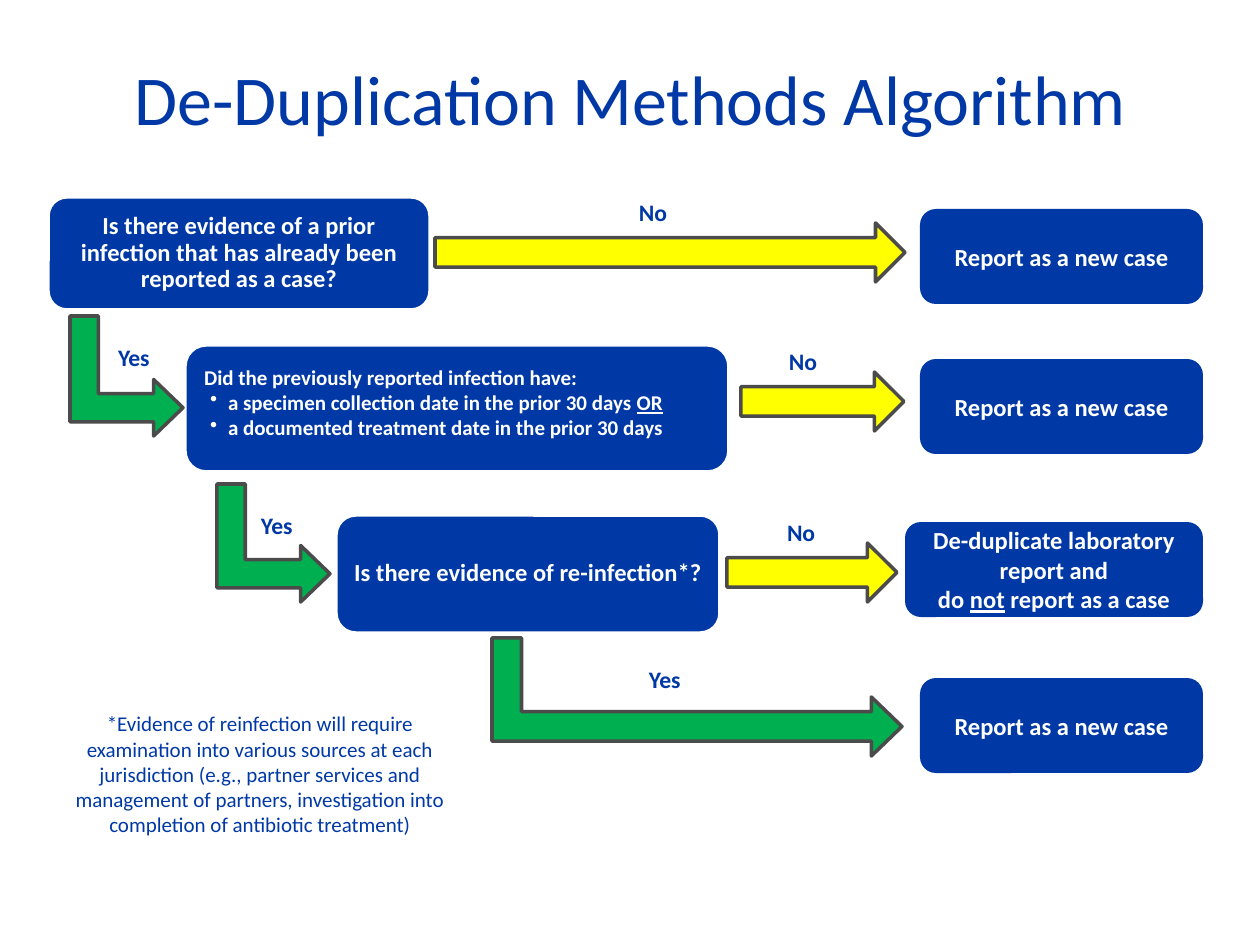
from lxml.etree import SubElement
from pptx import Presentation
from pptx.dml.color import RGBColor
from pptx.enum.shapes import MSO_SHAPE as Shape
from pptx.enum.text import MSO_ANCHOR as Anchor, PP_ALIGN as Align
from pptx.oxml.ns import qn
from pptx.util import Emu, Pt

PX_PER_INCH = 126
FONT = "Calibri"
BLUE, GREEN, YELLOW, WHITE, GRAY = "0039A6", "00B050", "FFFF00", "FFFFFF", "4B4B4B"
NEW_CASE = [["Report as a new case"]]


def px(length):
    return Emu(round(length * 914400 / PX_PER_INCH))


def paint(color_format, color):
    color_format.rgb = RGBColor.from_string(color)


def add_bullet(paragraph, indent, hang):
    properties = paragraph._p.get_or_add_pPr()
    properties.set("marL", str(px(indent)))
    properties.set("indent", str(-px(hang)))
    SubElement(properties, qn("a:buChar")).set("char", "•")


def write(shape, paragraphs, size, color, bold=False, align=Align.LEFT,
          anchor=Anchor.TOP, inset=(13, 6), spacing=None, bullets=False):
    """Each paragraph is a list of runs; a run starting with _ is underlined."""
    frame = shape.text_frame
    frame.word_wrap = True
    frame.vertical_anchor = anchor
    frame.margin_left = frame.margin_right = px(inset[0])
    frame.margin_top = frame.margin_bottom = px(inset[1])
    for index, runs in enumerate(paragraphs):
        paragraph = frame.add_paragraph() if index else frame.paragraphs[0]
        paragraph.alignment = align
        if spacing:
            paragraph.line_spacing = spacing
        if bullets and index:
            add_bullet(paragraph, 24, 18)
        for text in runs:
            run = paragraph.add_run()
            run.text = text.lstrip("_")
            font = run.font
            font.name, font.size, font.bold = FONT, Pt(size), bold
            if text.startswith("_"):
                font.underline = True
            paint(font.color, color)


def add_text(slide, box, text, size, **style):
    text_box = slide.shapes.add_textbox(*map(px, box))
    write(text_box, [[text]], size, BLUE, **style)


def add_block(slide, kind, box, fill, line=None):
    shape = slide.shapes.add_shape(kind, *map(px, box))
    shape.shadow.inherit = False
    shape.fill.solid()
    paint(shape.fill.fore_color, fill)
    if line:
        paint(shape.line.color, line)
        shape.line.width = Pt(2)
    else:
        shape.line.fill.background()
    return shape


def add_question(slide, box, text):
    shape = add_block(slide, Shape.ROUNDED_RECTANGLE, box, BLUE, WHITE)
    write(shape, [[text]], 14, WHITE, bold=True, align=Align.CENTER,
          anchor=Anchor.MIDDLE, inset=(9, 9), spacing=0.9)


def add_criteria(slide, box, paragraphs):
    shape = add_block(slide, Shape.ROUNDED_RECTANGLE, box, BLUE, WHITE)
    write(shape, paragraphs, 12, WHITE, bold=True, inset=(13, 13), bullets=True)


def add_outcome(slide, box, paragraphs):
    shape = add_block(slide, Shape.ROUNDED_RECTANGLE, box, BLUE)
    write(shape, paragraphs, 14, WHITE, bold=True, align=Align.CENTER,
          anchor=Anchor.MIDDLE)


def add_answer(slide, left, top, text):
    add_text(slide, (left, top, 72, 42), text, 13.5, bold=True)


def add_no_arrow(slide, box, label_shift):
    left, top, _, _ = box
    add_block(slide, Shape.RIGHT_ARROW, box, YELLOW, GRAY)
    add_answer(slide, left + label_shift, top - 31, "No")


def add_yes_arrow(slide, box, label_shift):
    """Down-then-right elbow filling the box: an up arrow turned by 90 degrees."""
    left, top, width, height = box
    unturned = (left + (width - height) / 2, top + (height - width) / 2, height, width)
    arrow = add_block(slide, Shape.BENT_UP_ARROW, unturned, GREEN, GRAY)
    arrow.rotation = 90
    for index, value in enumerate((0.25, 0.25, 0.26)):
        arrow.adjustments[index] = value
    add_answer(slide, left + label_shift, top + 21, "Yes")


def build_slide(slide):
    add_text(slide, (73, 49, 1115, 97), "De-Duplication Methods Algorithm", 40,
             align=Align.CENTER)

    add_question(slide, (48, 197, 382, 113),
                 "Is there evidence of a prior infection that has already been "
                 "reported as a case?")
    add_criteria(slide, (185, 345, 544, 127), [
        ["Did the previously reported infection have:"],
        ["a specimen collection date in the prior 30 days ", "_OR"],
        ["a documented treatment date in the prior 30 days"],
    ])
    add_question(slide, (336, 515, 384, 118), "Is there evidence of re-infection*?")

    for top in (209, 359, 678):
        add_outcome(slide, (920, top, 283, 95), NEW_CASE)
    add_outcome(slide, (905, 522, 298, 95), [
        ["De-duplicate laboratory report and"],
        ["do ", "_not", " report as a case"],
    ])

    for box, shift in (((435, 223, 470, 59), 191),
                       ((741, 372, 163, 59), 35),
                       ((727, 543, 170, 59), 47)):
        add_no_arrow(slide, box, shift)
    for box, shift in (((70, 316, 113, 120), 35),
                       ((217, 484, 113, 118), 31),
                       ((492, 638, 410, 118), 144)):
        add_yes_arrow(slide, box, shift)

    add_text(slide, (45, 705, 430, 140),
             "*Evidence of reinfection will require examination into various "
             "sources at each jurisdiction (e.g., partner services and management "
             "of partners, investigation into completion of antibiotic treatment)",
             12, align=Align.CENTER)


def main():
    presentation = Presentation()
    presentation.slide_width, presentation.slide_height = px(1260), px(945)
    build_slide(presentation.slides.add_slide(presentation.slide_layouts[6]))
    presentation.save("out.pptx")


if __name__ == "__main__":
    main()
